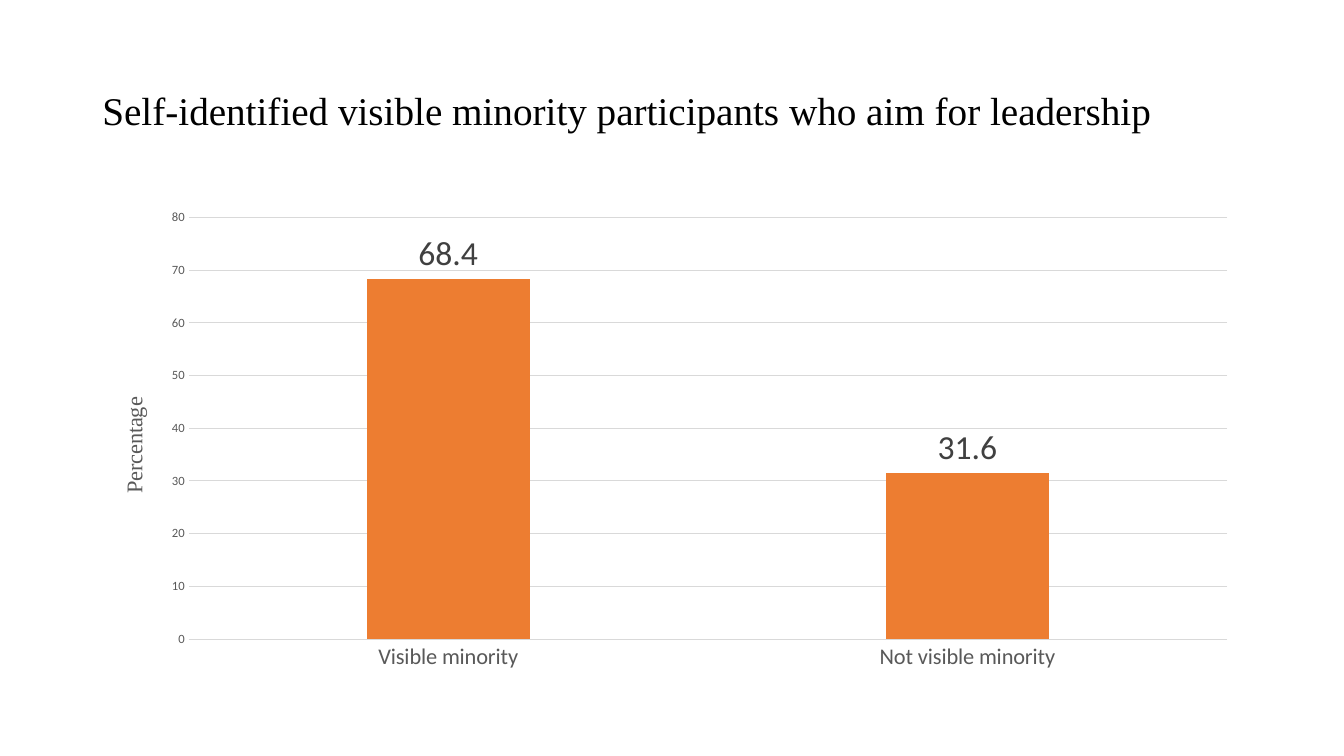
from lxml import etree
from pptx import Presentation
from pptx.chart.data import CategoryChartData
from pptx.dml.color import RGBColor
from pptx.enum.chart import XL_CHART_TYPE as ChartType, XL_LABEL_POSITION as LabelPosition
from pptx.enum.chart import XL_TICK_MARK as TickMark
from pptx.enum.text import MSO_ANCHOR as Anchor
from pptx.oxml.ns import qn
from pptx.util import Cm, Pt

BLACK = RGBColor(0x00, 0x00, 0x00)
DARK_GREY = RGBColor(0x40, 0x40, 0x40)
GREY = RGBColor(0x59, 0x59, 0x59)
LIGHT_GREY = RGBColor(0xD9, 0xD9, 0xD9)
ORANGE = RGBColor(0xED, 0x7D, 0x31)
SERIF, SANS = "Times New Roman", "Calibri"


def style(font, text=None, para=None, *, size, color, name=SANS):
    """Format a font, or a new span of text in a paragraph."""
    if para is not None:
        span = para.add_run()
        span.text = text
        font = span.font
    font.size, font.name, font.bold = Pt(size), name, False
    font.color.rgb = color


def place(parent, index, **fractions):
    """Fix a chart part at fractions of the chart area."""
    for old in parent.findall(qn("c:layout")):
        parent.remove(old)
    layout = etree.Element(qn("c:layout"))
    manual = etree.SubElement(layout, qn("c:manualLayout"))
    for tag, value in fractions.items():
        etree.SubElement(manual, qn("c:" + tag)).set("val", str(value))
    parent.insert(index, layout)


deck = Presentation()
deck.slide_width, deck.slide_height = Cm(33.87), Cm(19.05)
page = deck.slides.add_slide(deck.slide_layouts[6])
left, width = Cm(2.33), Cm(29.21)

# Heading
box = page.shapes.add_textbox(left, Cm(1.01), width, Cm(3.68))
frame = box.text_frame
frame.word_wrap = True
frame.vertical_anchor = Anchor.MIDDLE
para = frame.paragraphs[0]
para.line_spacing = 0.9
style(None, "Self-identified visible minority participants who aim for leadership", para,
      size=28, color=BLACK, name=SERIF)

# Column chart
data = CategoryChartData()
data.categories = ["Visible minority", "Not visible minority"]
data.add_series("Series 1", [68.4, 31.6])
chart = page.shapes.add_chart(ChartType.COLUMN_CLUSTERED, left, Cm(5.07), width, Cm(12.09), data).chart
chart.has_legend = False
chart.has_title = False
style(chart.font, size=10, color=BLACK)

# Columns and their labels
plot = chart.plots[0]
plot.vary_by_categories = False
plot.gap_width, plot.overlap = 219, -27
columns = plot.series[0]
columns.format.fill.solid()
columns.format.fill.fore_color.rgb = ORANGE
labels = columns.data_labels
labels.show_value = True
labels.position = LabelPosition.OUTSIDE_END
style(labels.font, size=24, color=DARK_GREY)

# Axes and gridlines
categories, values = chart.category_axis, chart.value_axis
for axis, size in ((categories, 16), (values, 9)):
    axis.major_tick_mark = axis.minor_tick_mark = TickMark.NONE
    style(axis.tick_labels.font, size=size, color=GREY)
values.minimum_scale, values.maximum_scale, values.major_unit = 0, 80, 10
values.format.line.fill.background()
for line in (categories.format.line, values.major_gridlines.format.line):
    line.color.rgb = LIGHT_GREY
    line.width = Pt(0.75)

# Axis title, turned to read upwards
title_frame = values.axis_title.text_frame
style(None, "Percentage", title_frame.paragraphs[0], size=16, color=GREY, name=SERIF)
title = values.axis_title._element
turn = title.find(".//" + qn("a:bodyPr"))
turn.set("rot", "-5400000")
turn.set("vert", "horz")
place(title, 1, xMode="edge", yMode="edge", x=0.02, y=0.4)

# Plot area
plot_area = chart._chartSpace.find(".//" + qn("c:plotArea"))
place(plot_area, 0, layoutTarget="inner", xMode="edge", yMode="edge",
      x=0.083, y=0.034, w=0.896, h=0.879)

deck.save("out.pptx")
